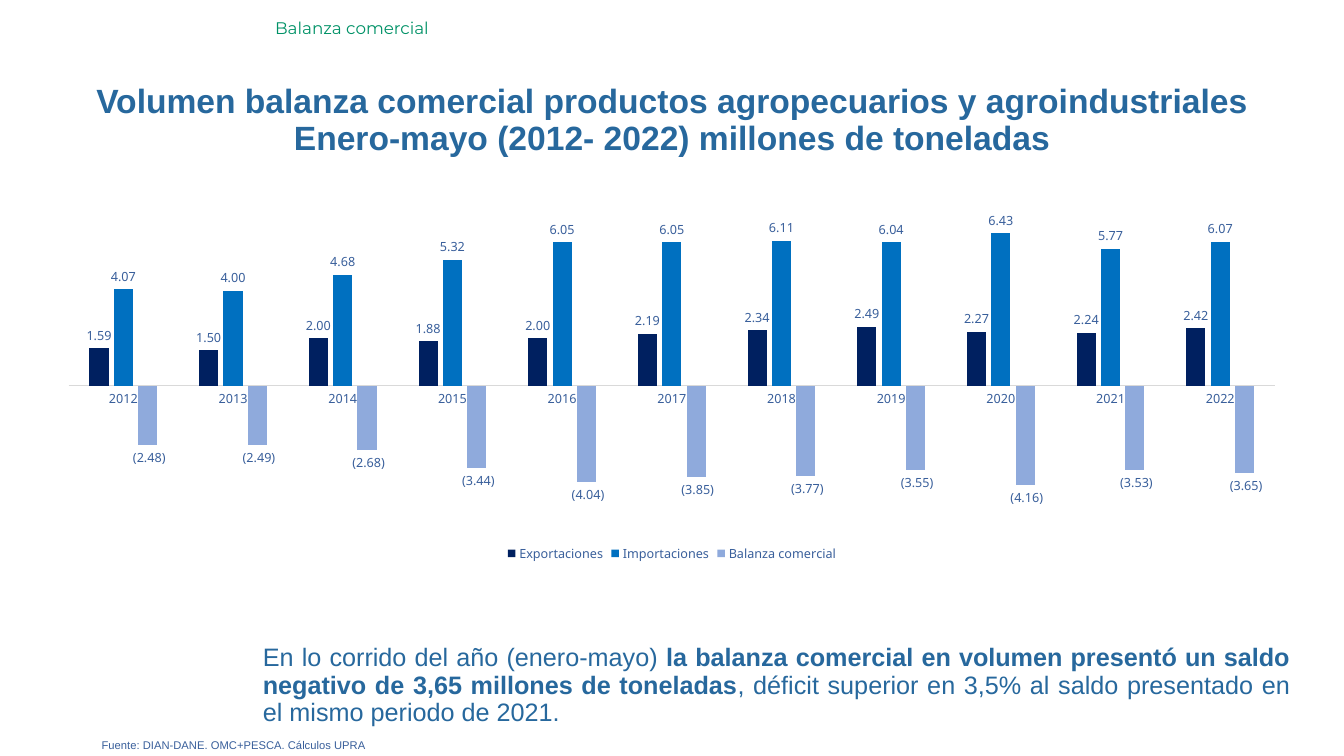
from lxml import etree
from pptx import Presentation
from pptx.chart.data import CategoryChartData
from pptx.dml.color import RGBColor
from pptx.enum.chart import XL_CHART_TYPE, XL_LABEL_POSITION, XL_LEGEND_POSITION, XL_TICK_MARK
from pptx.enum.text import MSO_ANCHOR, PP_ALIGN
from pptx.util import Pt

LEFT, CENTER, JUSTIFY = PP_ALIGN.LEFT, PP_ALIGN.CENTER, PP_ALIGN.JUSTIFY
TOP, MIDDLE = MSO_ANCHOR.TOP, MSO_ANCHOR.MIDDLE
COLUMNS = XL_CHART_TYPE.COLUMN_CLUSTERED
OUTSIDE = XL_LABEL_POSITION.OUTSIDE_END
BOTTOM = XL_LEGEND_POSITION.BOTTOM
NO_TICK = XL_TICK_MARK.NONE

COLORS = {
    "section": "009267", "heading": "27689D", "label": "395F9B", "axis": "D9D9D9",
    "exports": "002060", "imports": "0070C0", "balance": "8FAADC",
}

# Content: each text has box, font, size, colour, alignment, anchor, line spacing, runs
TEXTS = [
    ((189.4, 9.4, 770, 21.6), "Montserrat", 12, "section", LEFT, TOP, 1,
     [("Balanza comercial", False)]),
    ((0, 38.9, 960, 95), "Arial", 24, "heading", CENTER, MIDDLE, 0.9,
     [("Volumen balanza comercial productos agropecuarios y agroindustriales", True),
      None,
      ("Enero-mayo (2012- 2022) millones de toneladas", True)]),
    ((180.7, 457.2, 748, 61.2), "Arial", 18, "heading", JUSTIFY, TOP, 0.9,
     [("En lo corrido del año (enero-mayo) ", False),
      ("la balanza comercial en volumen presentó un saldo negativo de "
       "3,65 millones de toneladas", True),
      (", déficit superior en 3,5% al saldo presentado en el mismo periodo de 2021.", False)]),
    ((65.5, 524, 890, 16), "Arial", 8, "label", JUSTIFY, TOP, 1,
     [("Fuente: DIAN-DANE. OMC+PESCA. Cálculos UPRA", False)]),
]

YEARS = [str(year) for year in range(2012, 2023)]
SERIES = [
    ("Exportaciones", "exports",
     [1.59, 1.5, 2, 1.88, 2, 2.19, 2.34, 2.49, 2.27, 2.24, 2.42]),
    ("Importaciones", "imports",
     [4.07, 4, 4.68, 5.32, 6.05, 6.05, 6.11, 6.04, 6.43, 5.77, 6.07]),
    ("Balanza comercial", "balance",
     [-2.48, -2.49, -2.68, -3.44, -4.04, -3.85, -3.77, -3.55, -4.16, -3.53, -3.65]),
]
CHART_BOX = (31, 134.6, 897.8, 270)
PLOT_LAYOUT = {"x": 0.02, "y": 0.02, "w": 0.96, "h": 0.88}
NUMBER_FORMAT = r'_(* #,##0.00_);_(* \(#,##0.00\);_(* "-"??_);_(@_)'
CHART_NS = "http://schemas.openxmlformats.org/drawingml/2006/chart"


def rgb(name):
    return RGBColor.from_string(COLORS[name])


def set_font(font, name, size, color):
    font.name, font.size = name, Pt(size)
    font.color.rgb = rgb(color)


def add_text(slide, box, name, size, color, align, anchor, spacing, runs):
    tf = slide.shapes.add_textbox(*map(Pt, box)).text_frame
    tf.word_wrap = True
    tf.vertical_anchor = anchor
    p = tf.paragraphs[0]
    p.alignment, p.line_spacing = align, spacing
    for run in runs:
        if run is None:
            p.add_line_break()
            continue
        r = p.add_run()
        r.text, r.font.bold = run
        set_font(r.font, name, size, color)


def set_plot_layout(chart):
    """Fix the inner plot area as fractions of the chart."""
    area = chart.plots[0]._element.getparent()
    for old in area.findall(f"{{{CHART_NS}}}layout"):
        area.remove(old)
    layout = etree.Element(f"{{{CHART_NS}}}layout")
    manual = etree.SubElement(layout, f"{{{CHART_NS}}}manualLayout")
    settings = {"layoutTarget": "inner", "xMode": "edge", "yMode": "edge", **PLOT_LAYOUT}
    for tag, value in settings.items():
        etree.SubElement(manual, f"{{{CHART_NS}}}{tag}", val=str(value))
    area.insert(0, layout)


def add_balance_chart(slide):
    data = CategoryChartData(number_format=NUMBER_FORMAT)
    data.categories = YEARS
    for name, _, values in SERIES:
        data.add_series(name, values)
    chart = slide.shapes.add_chart(COLUMNS, *map(Pt, CHART_BOX), data).chart
    chart.has_title = False
    set_font(chart.font, "Noto Sans", 10, "label")

    # Bars and value labels
    plot = chart.plots[0]
    plot.gap_width, plot.overlap, plot.vary_by_categories = 219, -27, False
    for series, (_, color, _) in zip(plot.series, SERIES):
        series.format.fill.solid()
        series.format.fill.fore_color.rgb = rgb(color)
        series.invert_if_negative = False
        labels = series.data_labels
        labels.show_value, labels.position = True, OUTSIDE
        labels.number_format, labels.number_format_is_linked = NUMBER_FORMAT, False
        set_font(labels.font, "Noto Sans", 9, "label")

    # Axes
    years, volume = chart.category_axis, chart.value_axis
    years.major_tick_mark = years.minor_tick_mark = NO_TICK
    years.format.line.color.rgb = rgb("axis")
    years.format.line.width = Pt(0.75)
    set_font(years.tick_labels.font, "Noto Sans", 9, "label")
    volume.minimum_scale, volume.maximum_scale = -6, 8
    volume.has_major_gridlines = False
    volume.visible = False

    # Legend
    chart.has_legend = True
    chart.legend.position = BOTTOM
    chart.legend.include_in_layout = False
    set_font(chart.legend.font, "Noto Sans", 9, "label")
    set_plot_layout(chart)


def main():
    prs = Presentation()
    prs.slide_width, prs.slide_height = Pt(960), Pt(540)
    s = prs.slides.add_slide(prs.slide_layouts[6])
    for text in TEXTS:
        add_text(s, *text)
    add_balance_chart(s)
    prs.save("out.pptx")


if __name__ == "__main__":
    main()
